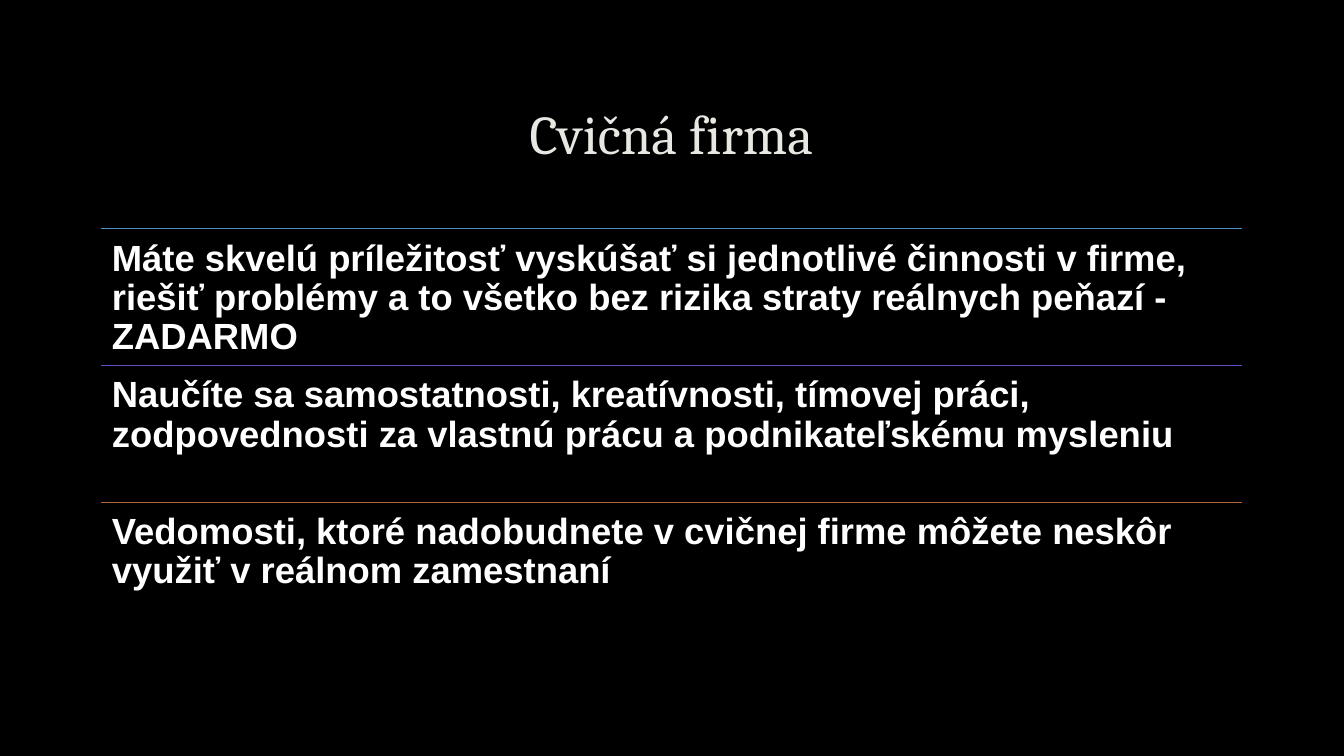
from lxml import etree
from pptx import Presentation
from pptx.dml.color import RGBColor
from pptx.enum.shapes import MSO_CONNECTOR
from pptx.enum.text import MSO_ANCHOR, PP_ALIGN
from pptx.oxml.ns import qn
from pptx.util import Pt

STRAIGHT = MSO_CONNECTOR.STRAIGHT
TOP, MIDDLE = MSO_ANCHOR.TOP, MSO_ANCHOR.MIDDLE
LEFT, CENTER = PP_ALIGN.LEFT, PP_ALIGN.CENTER

COLORS = {
    "background": "000000",
    "title": "E8E7E2",
    "body": "FFFFFF",
    "blue": "4D91C3",
    "violet": "6B4DC3",
    "brown": "B1653B",
}

MARGIN = 72
CONTENT_WIDTH = 815
ROWS_TOP = 163.4
ROW_HEIGHT = 97.6

BENEFITS = [
    ("blue", "Máte skvelú príležitosť vyskúšať si jednotlivé činnosti v firme, "
             "riešiť problémy a to všetko bez rizika straty reálnych peňazí - ZADARMO"),
    ("violet", "Naučíte sa samostatnosti, kreatívnosti, tímovej práci, "
               "zodpovednosti za vlastnú prácu a podnikateľskému mysleniu"),
    ("brown", "Vedomosti, ktoré nadobudnete v cvičnej firme môžete neskôr "
              "využiť v reálnom zamestnaní"),
]


def color(name):
    return RGBColor.from_string(COLORS[name])


def write_text(para, text, *, font, size, fill, bold=False, align=LEFT):
    para.alignment = align
    para.line_spacing = 0.9
    span = para.add_run()
    span.text = text
    span.font.name = font
    span.font.size = Pt(size)
    span.font.bold = bold
    span.font.color.rgb = color(fill)


class SlideBuilder:
    def __init__(self, page):
        self.page = page
        background = page.background.fill
        background.solid()
        background.fore_color.rgb = color("background")

    def text(self, text, top, height, *, anchor=TOP, inset=7.9, **style):
        box = self.page.shapes.add_textbox(
            Pt(MARGIN), Pt(top), Pt(CONTENT_WIDTH), Pt(height))
        frame = box.text_frame
        frame.word_wrap = True
        frame.vertical_anchor = anchor
        frame.margin_left = frame.margin_right = Pt(inset)
        frame.margin_top = frame.margin_bottom = Pt(inset)
        write_text(frame.paragraphs[0], text, **style)

    def rule(self, top, line_color):
        line = self.page.shapes.add_connector(
            STRAIGHT, Pt(MARGIN), Pt(top), Pt(MARGIN + CONTENT_WIDTH), Pt(top))
        line.line.color.rgb = color(line_color)
        line.line.width = Pt(0.75)
        etree.SubElement(line._element.spPr, qn("a:effectLst"))


def main():
    deck = Presentation()
    deck.slide_width, deck.slide_height = Pt(960), Pt(540)
    slide = SlideBuilder(deck.slides.add_slide(deck.slide_layouts[6]))

    slide.text("Cvičná firma", 48.2, 99.4, anchor=MIDDLE, inset=3.6,
               font="Cambria", size=39, fill="title", align=CENTER)
    for index, (line_color, benefit) in enumerate(BENEFITS):
        top = ROWS_TOP + index * ROW_HEIGHT
        slide.rule(top, line_color)
        slide.text(benefit, top, ROW_HEIGHT,
                   font="Arial", size=26, fill="body", bold=True)

    deck.save("out.pptx")


if __name__ == "__main__":
    main()
